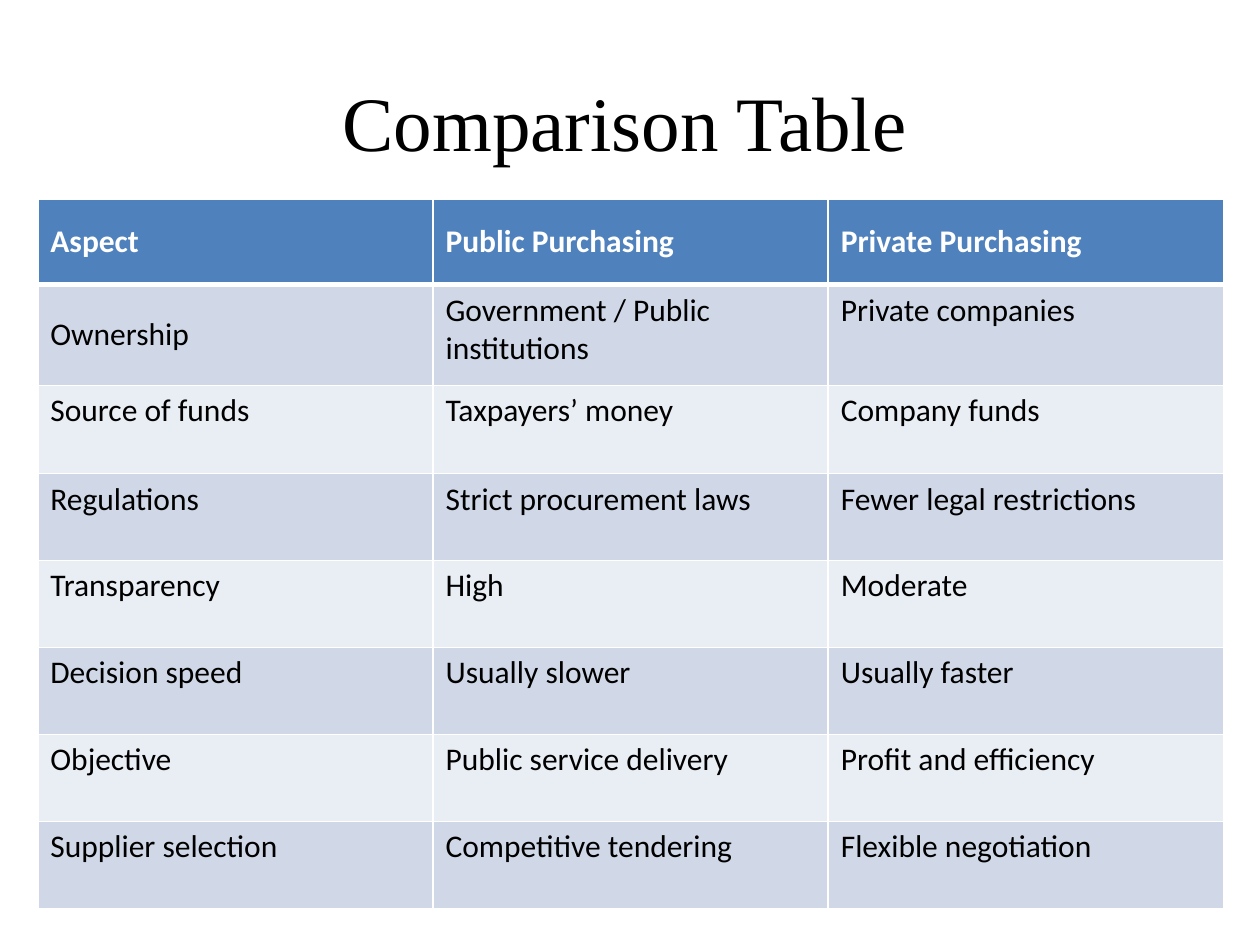
import pptx
import pptx.dml.color
import pptx.enum.text
import pptx.oxml
import pptx.oxml.ns
import pptx.util
from pptx.util import Inches

ANCHOR = pptx.enum.text.MSO_ANCHOR
ALIGN = pptx.enum.text.PP_ALIGN

ROWS = [
    ("Aspect", "Public Purchasing", "Private Purchasing"),
    ("Ownership", "Government / Public institutions", "Private companies"),
    ("Source of funds", "Taxpayers’ money", "Company funds"),
    ("Regulations", "Strict procurement laws", "Fewer legal restrictions"),
    ("Transparency", "High", "Moderate"),
    ("Decision speed", "Usually slower", "Usually faster"),
    ("Objective", "Public service delivery", "Profit and efficiency"),
    ("Supplier selection", "Competitive tendering", "Flexible negotiation"),
]
ROW_HEIGHTS = [0.68, 0.8, 0.7] + [0.69] * 5


def color(value):
    return pptx.dml.color.RGBColor.from_string(value)


class ComparisonSlide:
    title_format = {"name": "Times New Roman", "size": pptx.util.Pt(44)}
    cell_format = {"name": "Calibri", "size": pptx.util.Pt(18)}
    text_color = "000000"
    header_text_color = "FFFFFF"
    header_fill = "4F81BD"
    band_fills = ("D0D8E8", "E9EDF4")
    border_color = "FFFFFF"
    border_width = 1
    header_rule_width = 3

    def __init__(self, presentation):
        self.slide = presentation.slides.add_slide(presentation.slide_layouts[6])

    def add_text(self, text_frame, text, font_format, font_color):
        paragraph = text_frame.paragraphs[0]
        run = paragraph.add_run()
        run.text = text
        for name, value in font_format.items():
            setattr(run.font, name, value)
        run.font.color.rgb = color(font_color)
        return paragraph

    def add_title(self, text, left, top, width, height):
        shape = self.slide.shapes.add_textbox(
            Inches(left), Inches(top), Inches(width), Inches(height))
        frame = shape.text_frame
        frame.word_wrap = True
        frame.vertical_anchor = ANCHOR.MIDDLE
        paragraph = self.add_text(frame, text, self.title_format, self.text_color)
        paragraph.alignment = ALIGN.CENTER

    def add_borders(self, cell, row_index):
        """Draw all four cell edges, with a thicker rule below the header."""
        widths = dict.fromkeys(("lnL", "lnR", "lnT", "lnB"), self.border_width)
        if row_index == 0:
            widths["lnB"] = self.header_rule_width
        elif row_index == 1:
            widths["lnT"] = self.header_rule_width
        properties = cell._tc.get_or_add_tcPr()
        for tag, width in widths.items():
            properties.append(pptx.oxml.parse_xml(
                f'<a:{tag} {pptx.oxml.ns.nsdecls("a")} w="{pptx.util.Pt(width)}">'
                f'<a:solidFill><a:srgbClr val="{self.border_color}"/></a:solidFill>'
                f'</a:{tag}>'))

    def format_cell(self, cell, text, row_index):
        is_header = row_index == 0
        self.add_borders(cell, row_index)
        cell.fill.solid()
        cell.fill.fore_color.rgb = color(
            self.header_fill if is_header else self.band_fills[(row_index - 1) % 2])
        font_color = self.header_text_color if is_header else self.text_color
        font_format = {**self.cell_format, "bold": is_header}
        self.add_text(cell.text_frame, text, font_format, font_color)

    def add_table(self, rows, row_heights, left, top, width):
        shape = self.slide.shapes.add_table(
            len(rows), len(rows[0]), Inches(left), Inches(top),
            Inches(width), Inches(sum(row_heights)))
        table = shape.table
        for row_index, texts in enumerate(rows):
            table.rows[row_index].height = Inches(row_heights[row_index])
            for column_index, text in enumerate(texts):
                self.format_cell(table.cell(row_index, column_index), text, row_index)
        return table


def main():
    presentation = pptx.Presentation()
    presentation.slide_width = Inches(10)
    presentation.slide_height = Inches(7.5)
    comparison = ComparisonSlide(presentation)
    comparison.add_title("Comparison Table", 0.46, 0.33, 9, 1.25)
    table = comparison.add_table(ROWS, ROW_HEIGHTS, 0.3, 1.58, 9.41)
    header_cells = [table.cell(0, column) for column in range(len(ROWS[0]))]
    for cell in header_cells + [table.cell(1, 0)]:
        cell.vertical_anchor = ANCHOR.MIDDLE
    presentation.save("out.pptx")


if __name__ == "__main__":
    main()
